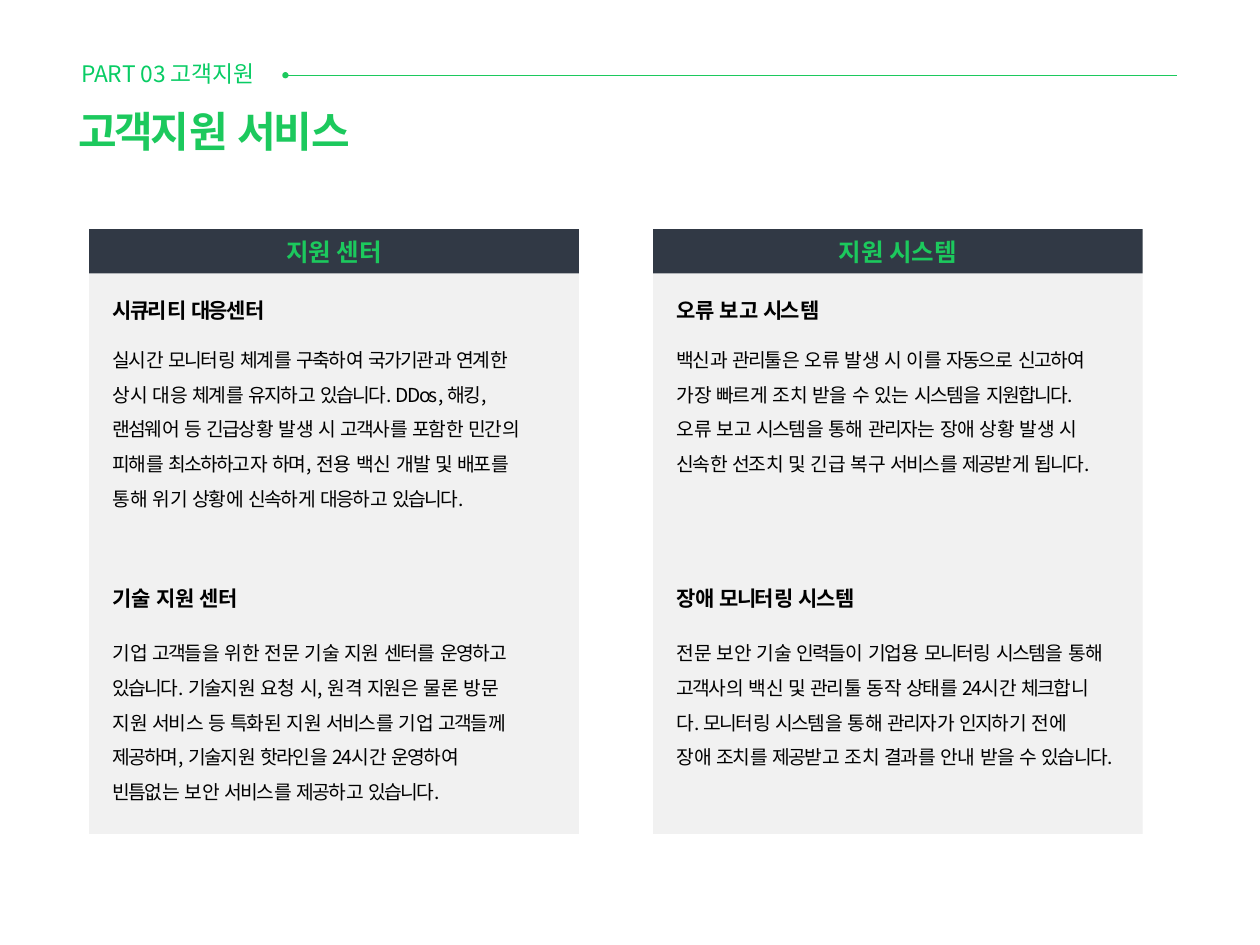
from lxml import etree
from pptx import Presentation
from pptx.dml.color import RGBColor
from pptx.enum import shapes, text
from pptx.oxml.ns import qn
from pptx.util import Pt

GREEN = RGBColor(0x1C, 0xC9, 0x5D)
MINT = RGBColor(0x08, 0xCC, 0x64)
SLATE = RGBColor(0x31, 0x39, 0x45)
PALE = RGBColor(0xF1, 0xF1, 0xF1)
BLACK = RGBColor(0, 0, 0)
FONT = "Noto Sans CJK KR"


def write(para, line, size, color, bold=False, track=0):
    """Add a line word by word, tracking all but each word's last letter."""
    words = line.split()
    for i, word in enumerate(words):
        tail = word[-1] + (" " if i < len(words) - 1 else "")
        for part, gap in ((word[:-1], track), (tail, 0)):
            if not part:
                continue
            run = para.add_run()
            run.text = part
            font = run.font
            font.name, font.size, font.bold = FONT, Pt(size), bold
            font.color.rgb = color
            props = run._r.get_or_add_rPr()
            props.set("spc", str(round(gap * 100)))
            etree.SubElement(props, qn("a:ea")).set("typeface", FONT)


def frame(shape, top=0.72):
    """Prepare a text frame and return it."""
    box = shape.text_frame
    box.word_wrap = True
    box.auto_size = text.MSO_AUTO_SIZE.NONE
    box.vertical_anchor = text.MSO_ANCHOR.TOP
    box.margin_left = box.margin_right = box.margin_bottom = 0
    box.margin_top = Pt(top)
    return box


deck = Presentation()
deck.slide_width, deck.slide_height = Pt(720), Pt(540)
slide = deck.slides.add_slide(deck.slide_layouts[5])
items = slide.shapes

# Part label
label = frame(items.add_textbox(Pt(46.4), Pt(33.2), Pt(112), Pt(18)))
para = label.paragraphs[0]
para.space_before = Pt(0.9)
write(para, "PART 03 고객지원", 13, MINT, track=-0.1)

# Title
title = items.title
title.left, title.top, title.width, title.height = Pt(45), Pt(59.6), Pt(167), Pt(31)
para = frame(title).paragraphs[0]
para.alignment = text.PP_ALIGN.LEFT
para.space_before = Pt(1)
write(para, "고객지원 서비스", 24, GREEN, True, -1.6)

# Rule with a dot at its start
rule = items.add_connector(shapes.MSO_CONNECTOR.STRAIGHT, Pt(162), Pt(43), Pt(672.5), Pt(43))
rule.line.color.rgb = GREEN
rule.line.width = Pt(0.48)
etree.SubElement(rule._element.spPr, qn("a:effectLst"))
dot = items.add_shape(shapes.MSO_SHAPE.OVAL, Pt(161.3), Pt(41.2), Pt(3.6), Pt(3.6))
dot.shadow.inherit = False
dot.fill.solid()
dot.fill.fore_color.rgb = GREEN
dot.line.fill.background()

# Panels: heading, then sections of heading and lines
PANELS = [
    ("지원 센터", [
        ("시큐리티 대응센터", [
            "실시간 모니터링 체계를 구축하여 국가기관과 연계한",
            "상시 대응 체계를 유지하고 있습니다. DDos, 해킹,",
            "랜섬웨어 등 긴급상황 발생 시 고객사를 포함한 민간의",
            "피해를 최소하하고자 하며, 전용 백신 개발 및 배포를",
            "통해 위기 상황에 신속하게 대응하고 있습니다."]),
        ("기술 지원 센터", [
            "기업 고객들을 위한 전문 기술 지원 센터를 운영하고",
            "있습니다. 기술지원 요청 시, 원격 지원은 물론 방문",
            "지원 서비스 등 특화된 지원 서비스를 기업 고객들께",
            "제공하며, 기술지원 핫라인을 24시간 운영하여",
            "빈틈없는 보안 서비스를 제공하고 있습니다."])]),
    ("지원 시스템", [
        ("오류 보고 시스템", [
            "백신과 관리툴은 오류 발생 시 이를 자동으로 신고하여",
            "가장 빠르게 조치 받을 수 있는 시스템을 지원합니다.",
            "오류 보고 시스템을 통해 관리자는 장애 상황 발생 시",
            "신속한 선조치 및 긴급 복구 서비스를 제공받게 됩니다."]),
        ("장애 모니터링 시스템", [
            "전문 보안 기술 인력들이 기업용 모니터링 시스템을 통해",
            "고객사의 백신 및 관리툴 동작 상태를 24시간 체크합니",
            "다. 모니터링 시스템을 통해 관리자가 인지하기 전에",
            "장애 조치를 제공받고 조치 결과를 안내 받을 수 있습니다."])]),
]
SLOTS = [(169.2, 8.1), (334.1, 10.8)]  # top, gap under the heading

for col, (name, parts) in enumerate(PANELS):
    left = 51 + 322.2 * col

    # Body and heading band
    for top, high, fill in ((156.2, 320.4, PALE), (131, 25.2, SLATE)):
        band = items.add_shape(shapes.MSO_SHAPE.RECTANGLE, Pt(left), Pt(top), Pt(279.8), Pt(high))
        band.shadow.inherit = False
        band.fill.solid()
        band.fill.fore_color.rgb = fill
        band.line.fill.background()
    box = frame(band, 0)
    box.vertical_anchor = text.MSO_ANCHOR.MIDDLE
    box.paragraphs[0].alignment = text.PP_ALIGN.CENTER
    write(box.paragraphs[0], name, 14, GREEN, True)

    # Sections
    for (head, lines), (top, gap) in zip(parts, SLOTS):
        high = 24 + gap + 18 * len(lines)
        box = frame(items.add_textbox(Pt(left + 13.4), Pt(top), Pt(260), Pt(high)))
        para = box.paragraphs[0]
        para.space_before = Pt(1)
        write(para, head, 12, BLACK, True, -1)
        para = box.add_paragraph()
        para.space_before = Pt(gap)
        para.line_spacing = 1.5
        for i, line in enumerate(lines):
            if i:
                para.add_line_break()
                # Size the break like the text so line heights stay even
                mark = para._p.findall(qn("a:br"))[-1]
                etree.SubElement(mark, qn("a:rPr")).set("sz", "1100")
            write(para, line, 11, BLACK, track=-1)

deck.save("out.pptx")
